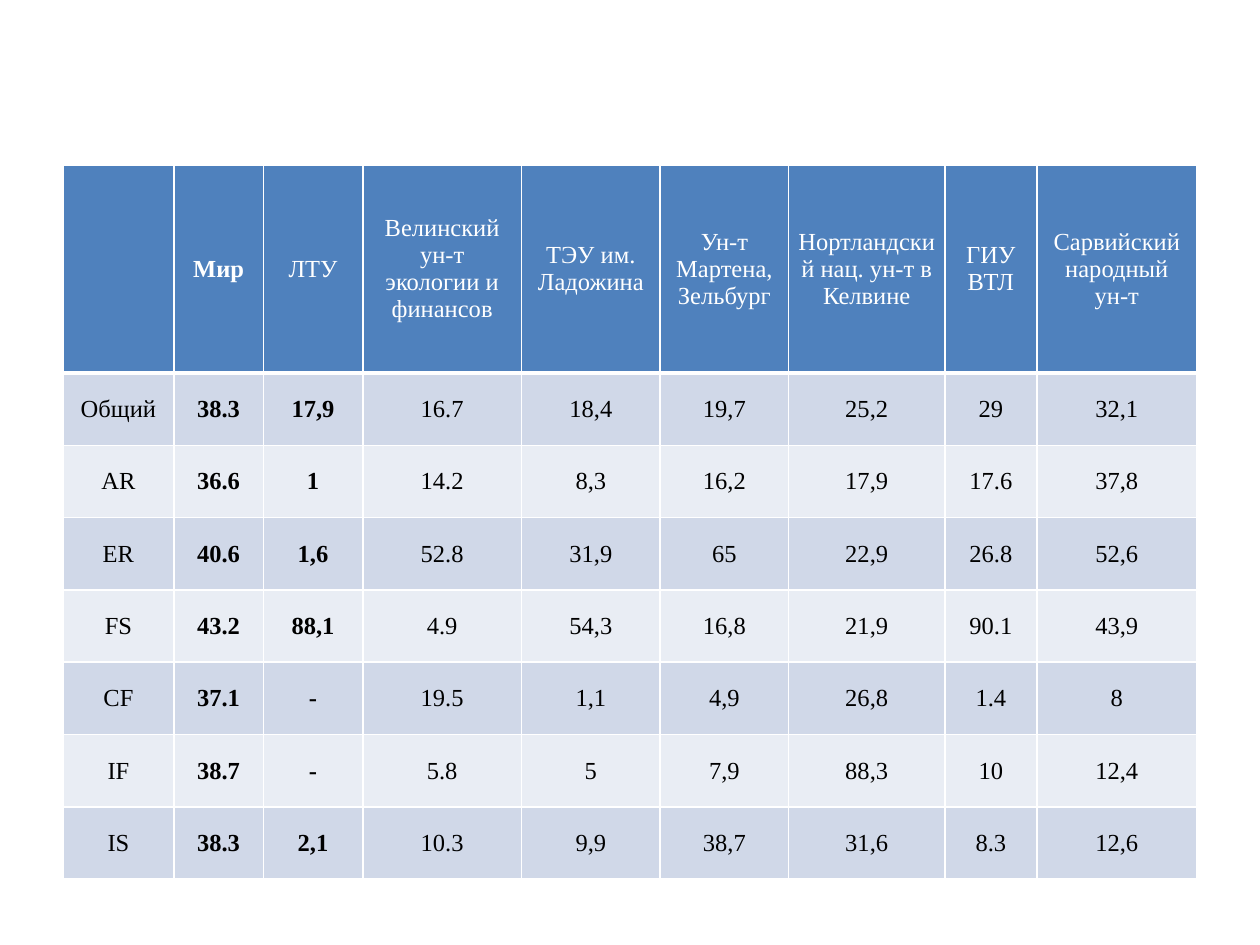
from lxml import etree
from pptx import Presentation
from pptx import util as u
from pptx.dml.color import RGBColor
from pptx.enum import text
from pptx.oxml.ns import qn

FONT = "Times New Roman"
WHITE, BLACK, BLUE = "FFFFFF", "000000", "4F81BD"
BANDS = ["D0D8E8", "E9EDF4"]

# Grid in inches
LEFT, TOP, HIGH, HEAD = 0.5, 1.31, 5.67, 1.65
COLS = [0.88, 0.71, 0.79, 1.26, 1.1, 1.02, 1.24, 0.73, 1.27]

TITLES = ["", "Мир", "ЛТУ", "Велинский ун-т экологии и финансов",
          "ТЭУ им. Ладожина", "Ун-т Мартена, Зельбург",
          "Нортландский нац. ун-т в Келвине", "ГИУ ВТЛ",
          "Сарвийский народный ун-т"]
SCORES = [
    "Общий 38.3 17,9 16.7 18,4 19,7 25,2 29 32,1",
    "AR 36.6 1 14.2 8,3 16,2 17,9 17.6 37,8",
    "ER 40.6 1,6 52.8 31,9 65 22,9 26.8 52,6",
    "FS 43.2 88,1 4.9 54,3 16,8 21,9 90.1 43,9",
    "CF 37.1 - 19.5 1,1 4,9 26,8 1.4 8",
    "IF 38.7 - 5.8 5 7,9 88,3 10 12,4",
    "IS 38.3 2,1 10.3 9,9 38,7 31,6 8.3 12,6",
]


def color(code):
    return RGBColor.from_string(code)


def border(cell, top, bottom):
    """Draw white lines round a cell; widths are in points."""
    props = cell._tc.get_or_add_tcPr()
    sides = [("lnL", 1), ("lnR", 1), ("lnT", top), ("lnB", bottom)]
    for i, (side, width) in enumerate(sides):
        line = etree.Element(qn("a:" + side), w=str(u.Pt(width)))
        fill = etree.SubElement(line, qn("a:solidFill"))
        etree.SubElement(fill, qn("a:srgbClr"), val=WHITE)
        props.insert(i, line)


def write(cell, words, fill, ink, bold):
    cell.fill.solid()
    cell.fill.fore_color.rgb = color(fill)
    cell.vertical_anchor = text.MSO_ANCHOR.MIDDLE
    cell.margin_left = cell.margin_right = u.Inches(0.07)
    cell.margin_top = cell.margin_bottom = 0
    cell.text = words
    para = cell.text_frame.paragraphs[0]
    para.alignment = text.PP_ALIGN.CENTER
    font = para.font
    font.name, font.size, font.bold = FONT, u.Pt(14), bold
    font.color.rgb = color(ink)


def add_grid(slide, rows):
    frame = slide.shapes.add_table(
        len(rows), len(COLS), u.Inches(LEFT), u.Inches(TOP),
        u.Inches(sum(COLS)), u.Inches(HIGH))
    table = frame.table
    for col, width in zip(table.columns, COLS):
        col.width = u.Inches(width)
    step = (HIGH - HEAD) / (len(rows) - 1)
    for r, row in enumerate(rows):
        table.rows[r].height = u.Inches(step if r else HEAD)
        fill, ink = (BANDS[(r - 1) % 2], BLACK) if r else (BLUE, WHITE)
        for c, words in enumerate(row):
            cell = table.cell(r, c)
            # The world column is bold; the next one only below the header
            write(cell, words, fill, ink, c == 1 or (c == 2 and r > 0))
            # A thick line parts the header from the scores
            border(cell, 3 if r == 1 else 1, 1 if r else 3)


def main():
    deck = Presentation()
    deck.slide_width, deck.slide_height = u.Inches(10), u.Inches(7.5)
    slide = deck.slides.add_slide(deck.slide_layouts[6])
    add_grid(slide, [TITLES] + [line.split() for line in SCORES])
    deck.save("out.pptx")


if __name__ == "__main__":
    main()
